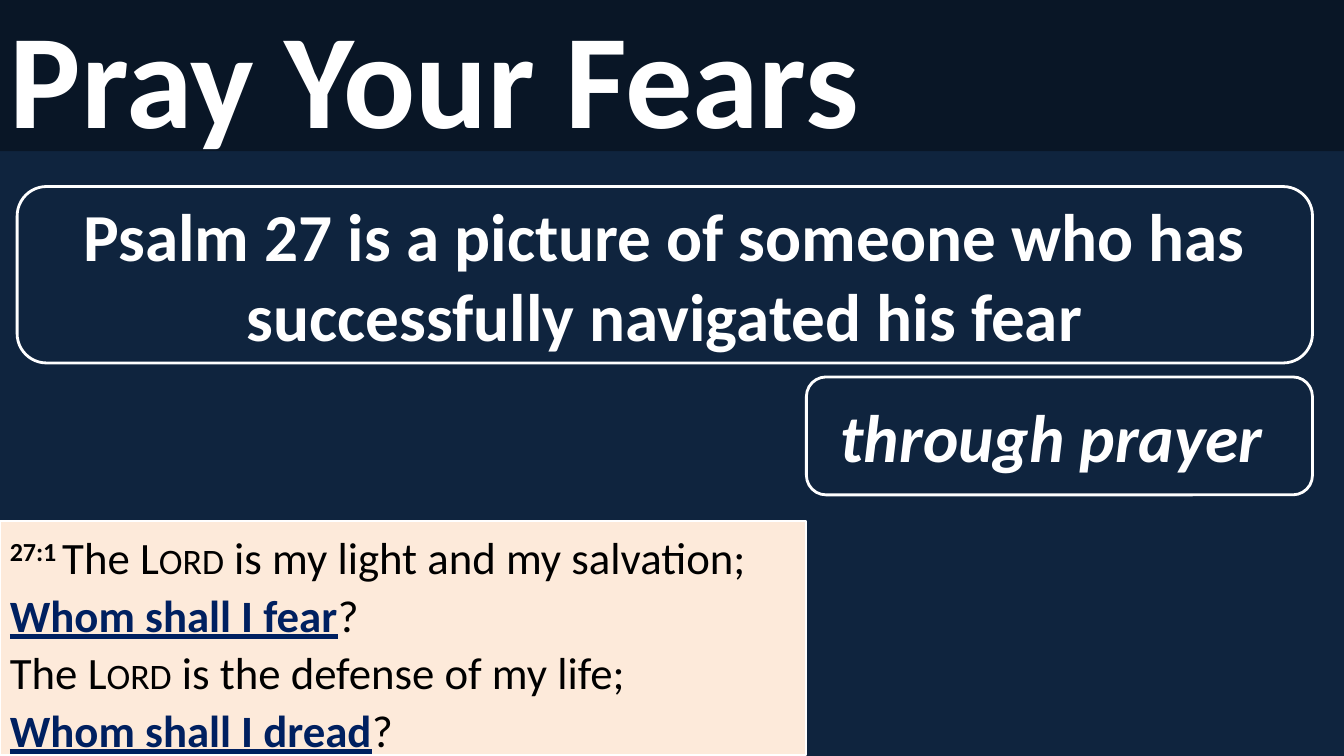
from dataclasses import dataclass

import lxml.etree
import pptx
import pptx.dml.color
import pptx.enum.shapes
import pptx.enum.text
import pptx.oxml.ns
import pptx.util

Pt = pptx.util.Pt
Shapes = pptx.enum.shapes.MSO_SHAPE
Align = pptx.enum.text.PP_ALIGN
Anchor = pptx.enum.text.MSO_ANCHOR


@dataclass(frozen=True)
class Theme:
    font: str = "Calibri"
    navy: str = "0F243E"
    white: str = "FFFFFF"
    black: str = "000000"
    cream: str = "FDEADA"
    accent: str = "002060"
    title_size: int = 96
    statement_size: int = 48
    verse_size: int = 32
    title_opacity: int = 38
    verse_spacing: float = 1.07


THEME = Theme()
VERSE_LINES = [
    [("27:1 ", "number"), ("The ", "plain"), ("Lord", "small"),
     (" is my light and my salvation;", "plain")],
    [("Whom shall I fear", "question"), ("?", "plain")],
    [("The ", "plain"), ("Lord", "small"), (" is the defense of my life;", "plain")],
    [("Whom shall I dread", "question"), ("?", "plain")],
]


def color(value):
    return pptx.dml.color.RGBColor.from_string(value)


def add_panel(page, kind, box, fill, line_width=0):
    panel = page.shapes.add_shape(kind, *(Pt(length) for length in box))
    panel.shadow.inherit = False
    panel.fill.solid()
    panel.fill.fore_color.rgb = color(fill)
    if line_width:
        panel.line.color.rgb = color(THEME.white)
        panel.line.width = Pt(line_width)
    else:
        panel.line.fill.background()
    panel.text_frame.word_wrap = True
    panel.text_frame.vertical_anchor = Anchor.MIDDLE
    return panel


def format_span(span, size, ink, bold=True, italic=False):
    span.font.name = THEME.font
    span.font.size = Pt(size)
    span.font.color.rgb = color(ink)
    span.font.bold = bold
    span.font.italic = italic


def write_text(panel, text, size, alignment, italic=False):
    para = panel.text_frame.paragraphs[0]
    para.text = text
    para.alignment = alignment
    format_span(para.runs[0], size, THEME.white, italic=italic)


def add_title(page, box, text):
    band = add_panel(page, Shapes.ROUNDED_RECTANGLE, box, THEME.black)
    band.adjustments[0] = 0
    ink = band.fill._xPr.find(".//" + pptx.oxml.ns.qn("a:srgbClr"))
    alpha = lxml.etree.SubElement(ink, pptx.oxml.ns.qn("a:alpha"))
    alpha.set("val", str(THEME.title_opacity * 1000))
    write_text(band, text, THEME.title_size, Align.LEFT)


def add_statement(page, box, text, italic=False):
    panel = add_panel(page, Shapes.ROUNDED_RECTANGLE, box, THEME.navy, 2)
    write_text(panel, text, THEME.statement_size, Align.CENTER, italic)


def add_verse(page, box, lines):
    panel = add_panel(page, Shapes.RECTANGLE, box, THEME.cream, 1.5)
    panel.text_frame.vertical_anchor = Anchor.TOP
    para = panel.text_frame.paragraphs[0]
    para.alignment = Align.LEFT
    para.line_spacing = THEME.verse_spacing
    for index, line in enumerate(lines):
        if index:
            para.add_line_break()
        for text, style in line:
            span = para.add_run()
            span.text = text
            question = style == "question"
            ink = THEME.accent if question else THEME.black
            format_span(span, THEME.verse_size, ink, bold=question or style == "number")
            span.font.underline = question
            properties = span._r.get_or_add_rPr()
            if style == "number":
                properties.set("baseline", "30000")
            elif style == "small":
                properties.set("cap", "small")


def build_slide(page, width, height):
    page.background.fill.solid()
    page.background.fill.fore_color.rgb = color(THEME.navy)
    middle = width * 0.6
    left, right = 12.25, 937.5
    verse_top = 372.25
    add_verse(page, (0, verse_top, middle, height - verse_top - 0.75), VERSE_LINES)
    add_statement(page, (left, 133.25, right - left, 126),
                  "Psalm 27 is a picture of someone who has successfully navigated his fear")
    add_title(page, (0, -0.5, width, 108.5), "Pray Your Fears")
    add_statement(page, (middle, 269.25, right - middle, 84.25), "through prayer ", italic=True)


def main():
    deck = pptx.Presentation()
    deck.slide_width = Pt(960)
    deck.slide_height = Pt(540)
    page = deck.slides.add_slide(deck.slide_layouts[6])
    build_slide(page, 960, 540)
    deck.save("out.pptx")


if __name__ == "__main__":
    main()
